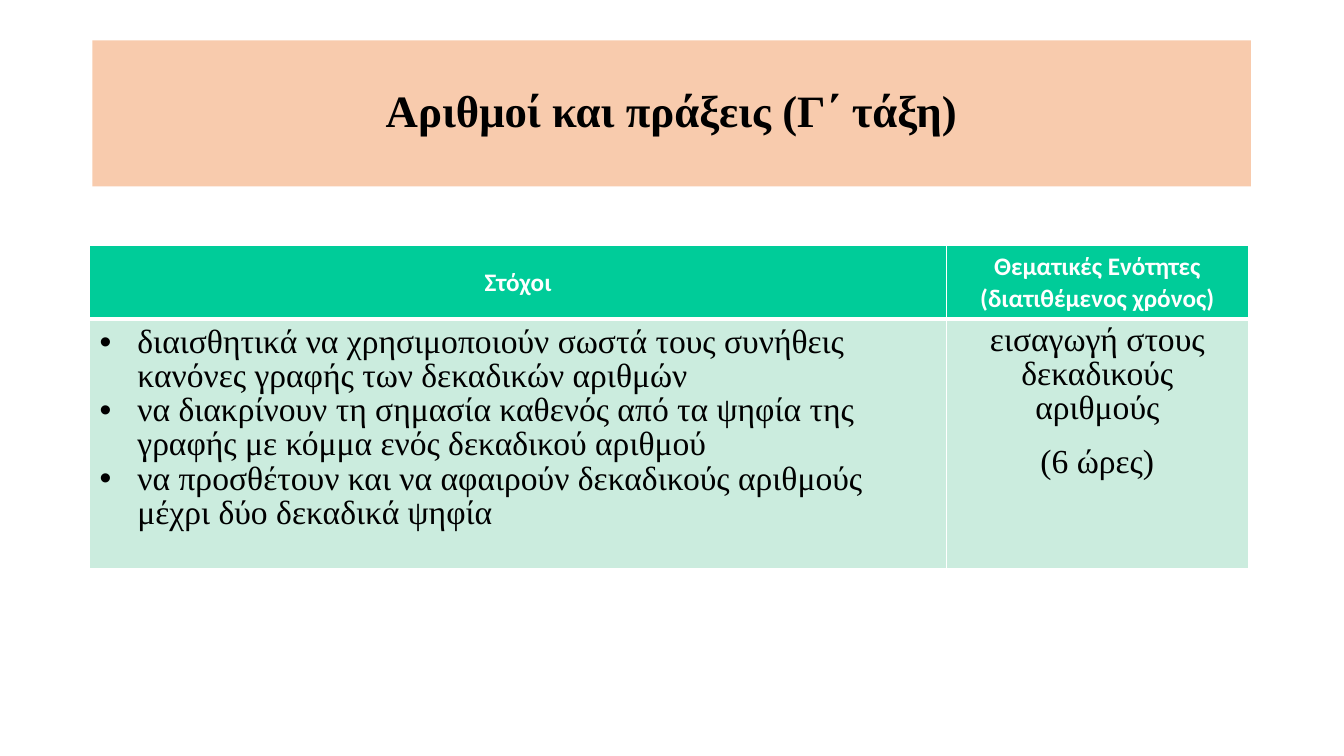
from dataclasses import dataclass

from lxml import etree
from pptx import Presentation
from pptx import util as u
from pptx.dml.color import RGBColor
from pptx.enum import shapes, text
from pptx.oxml import ns


@dataclass(frozen=True)
class Theme:
    """Colours, fonts and type sizes of the slide."""
    peach: str = "F8CBAD"
    green: str = "00CC99"
    mint: str = "CBECDE"
    white: str = "FFFFFF"
    black: str = "000000"
    serif: str = "Times New Roman"
    sans: str = "Calibri"
    title_size: float = 32
    header_size: float = 18
    body_size: float = 24
    thin: float = 0.91
    thick: float = 2.95


def add_element(parent, tag, **attributes):
    """Append a DrawingML element to a parent."""
    return etree.SubElement(parent, ns.qn(tag), attributes)


def write_text(frame, lines, *, font, size, color, bold=False, align=text.PP_ALIGN.LEFT,
               spacing=1.0, after=0, bullet_indent=0):
    """Write lines as formatted paragraphs, with bullets if an indent is given."""
    frame.word_wrap = True
    for index, line in enumerate(lines):
        paragraph = frame.paragraphs[0] if index == 0 else frame.add_paragraph()
        if bullet_indent:
            properties = paragraph._p.get_or_add_pPr()
            indent = u.Pt(bullet_indent)
            properties.set("marL", str(indent))
            properties.set("indent", str(-indent))
            add_element(properties, "a:buFont", typeface="Arial")
            add_element(properties, "a:buChar", char="•")
        paragraph.alignment = align
        paragraph.line_spacing = spacing
        paragraph.space_before = u.Pt(0)
        paragraph.space_after = u.Pt(after)
        run = paragraph.add_run()
        run.text = line
        run.font.name = font
        run.font.size = u.Pt(size)
        run.font.bold = bold
        run.font.color.rgb = RGBColor.from_string(color)


class SlideBuilder:
    """Adds styled elements to the current slide."""

    def __init__(self, slide, theme):
        """Keep the slide and its theme."""
        self.slide = slide
        self.theme = theme

    def add_banner(self, left, top, width, height, title):
        """Add the filled title banner."""
        shape = self.slide.shapes.add_shape(
            shapes.MSO_SHAPE.RECTANGLE, *map(u.Pt, (left, top, width, height)))
        shape.shadow.inherit = False
        shape.fill.solid()
        shape.fill.fore_color.rgb = RGBColor.from_string(self.theme.peach)
        shape.line.fill.background()
        shape.text_frame.vertical_anchor = text.MSO_ANCHOR.MIDDLE
        write_text(shape.text_frame, [title], font=self.theme.serif,
                   size=self.theme.title_size, color=self.theme.black, bold=True,
                   align=text.PP_ALIGN.CENTER, spacing=0.9)

    def add_table(self, left, top, column_widths, row_heights):
        """Add an empty table with the given columns and rows."""
        table = self.slide.shapes.add_table(
            len(row_heights), len(column_widths), u.Pt(left), u.Pt(top),
            u.Pt(sum(column_widths)), u.Pt(sum(row_heights))).table
        for column, width in zip(table.columns, column_widths):
            column.width = u.Pt(width)
        for row, height in zip(table.rows, row_heights):
            row.height = u.Pt(height)
        return table

    def fill_cell(self, cell, lines, *, fill, anchor, top_line, bottom_line,
                  margin_top=3.6, **text_format):
        """Fill a cell with its colour, borders and text."""
        properties = cell._tc.get_or_add_tcPr()
        thin = self.theme.thin
        borders = {"a:lnL": thin, "a:lnR": thin, "a:lnT": top_line, "a:lnB": bottom_line}
        for tag, width in borders.items():
            line = add_element(properties, tag, w=str(u.Pt(width)))
            line_fill = add_element(line, "a:solidFill")
            add_element(line_fill, "a:srgbClr", val=self.theme.white)
        cell.fill.solid()
        cell.fill.fore_color.rgb = RGBColor.from_string(fill)
        cell.vertical_anchor = anchor
        cell.margin_top = u.Pt(margin_top)
        cell.margin_bottom = u.Pt(3.6)
        write_text(cell.text_frame, lines, **text_format)

    def add_header(self, cell, lines):
        """Fill a header cell."""
        theme = self.theme
        self.fill_cell(cell, lines, fill=theme.green, anchor=text.MSO_ANCHOR.MIDDLE,
                       top_line=theme.thin, bottom_line=theme.thick, font=theme.sans,
                       size=theme.header_size, color=theme.white, bold=True,
                       align=text.PP_ALIGN.CENTER, spacing=1.04)

    def add_body(self, cell, lines, **text_format):
        """Fill a body cell."""
        theme = self.theme
        self.fill_cell(cell, lines, fill=theme.mint, anchor=text.MSO_ANCHOR.TOP,
                       top_line=theme.thick, bottom_line=theme.thin, font=theme.serif,
                       size=theme.body_size, color=theme.black, spacing=0.92,
                       **text_format)


def main():
    """Build and save the slide."""
    presentation = Presentation()
    presentation.slide_width = u.Pt(960.5)
    presentation.slide_height = u.Pt(540)
    slide = presentation.slides.add_slide(presentation.slide_layouts[6])
    builder = SlideBuilder(slide, Theme())

    builder.add_banner(66, 28.8, 828, 104.4, "Αριθμοί και πράξεις (Γ΄ τάξη)")
    table = builder.add_table(64, 175, (612.5, 215.5), (52.5, 178))
    builder.add_header(table.cell(0, 0), ["Στόχοι"])
    builder.add_header(table.cell(0, 1), ["Θεματικές Ενότητες", "(διατιθέμενος χρόνος)"])
    builder.add_body(table.cell(1, 0), [
        "διαισθητικά να χρησιμοποιούν σωστά τους συνήθεις κανόνες γραφής των δεκαδικών αριθμών",
        "να διακρίνουν τη σημασία καθενός από τα ψηφία της γραφής με κόμμα ενός δεκαδικού αριθμού",
        "να προσθέτουν και να αφαιρούν δεκαδικούς αριθμούς μέχρι δύο δεκαδικά ψηφία",
    ], margin_top=5, bullet_indent=27)
    builder.add_body(table.cell(1, 1), ["εισαγωγή στους δεκαδικούς αριθμούς", "(6 ώρες)"],
                     align=text.PP_ALIGN.CENTER, after=14.2)
    presentation.save("out.pptx")


if __name__ == "__main__":
    main()
